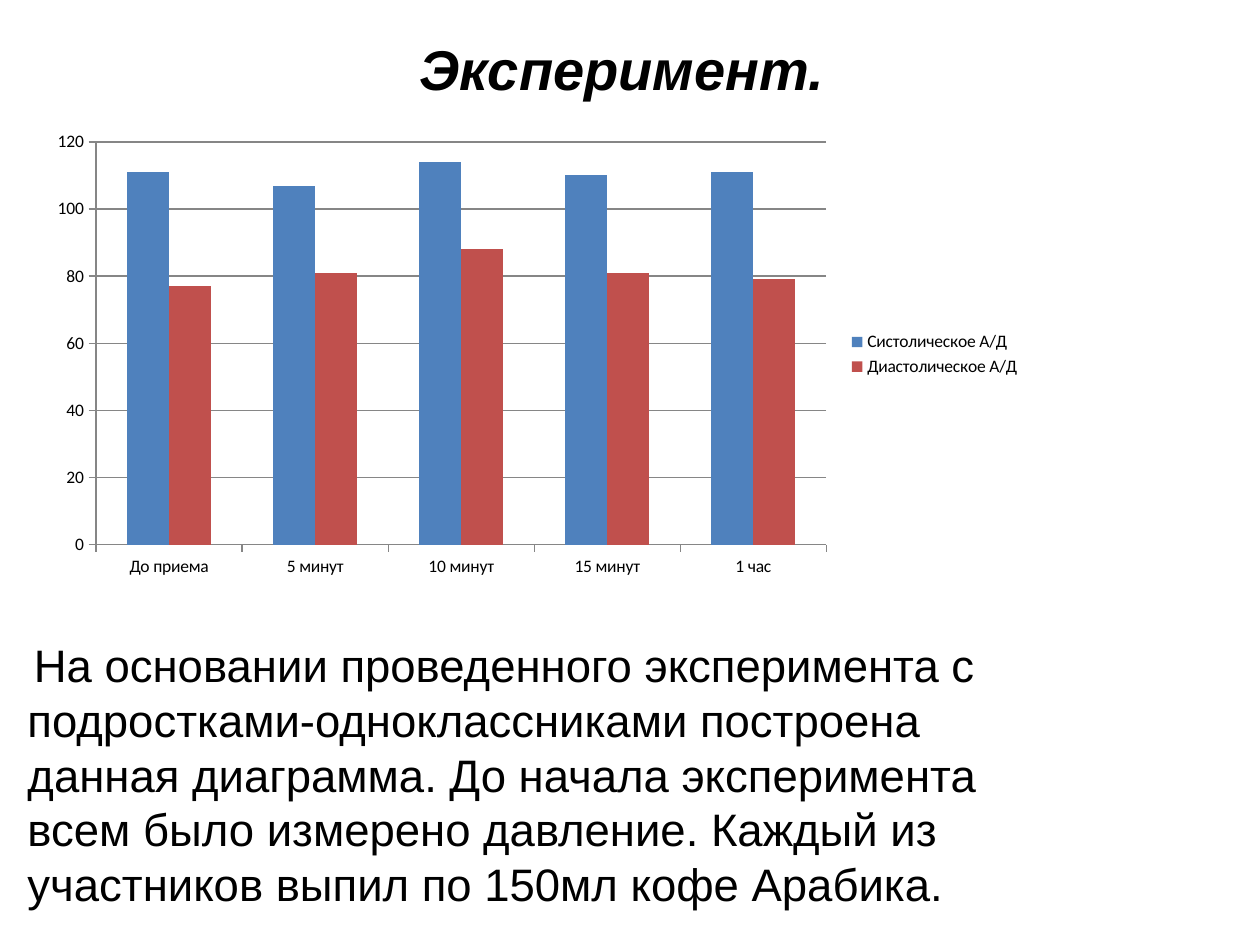
from pptx import Presentation
from pptx.chart.data import CategoryChartData
from pptx.dml.color import RGBColor
from pptx.enum.chart import XL_CHART_TYPE, XL_LEGEND_POSITION, XL_TICK_MARK
from pptx.enum.text import MSO_ANCHOR, MSO_AUTO_SIZE, PP_ALIGN
from pptx.util import Inches, Pt


class Theme:
    text = RGBColor.from_string("000000")
    axis = RGBColor.from_string("868686")
    series = [RGBColor.from_string("4F81BD"), RGBColor.from_string("C0504D")]
    text_font = "Arial"
    chart_font = "Calibri"
    title_size = 32
    body_size = 26
    chart_size = 10
    line_height = 1.2


presentation = Presentation()
presentation.slide_width = Inches(10)
presentation.slide_height = Inches(7.5)
WIDTH, HEIGHT = presentation.slide_width, presentation.slide_height


def area(left, top, width, height):
    """Turn shares of the slide's size into lengths."""
    return (int(WIDTH * left), int(HEIGHT * top),
            int(WIDTH * width), int(HEIGHT * height))


def write(shape, text, size, align=PP_ALIGN.LEFT, bold=False, italic=False):
    frame = shape.text_frame
    frame.word_wrap = True
    frame.auto_size = MSO_AUTO_SIZE.NONE
    frame.vertical_anchor = MSO_ANCHOR.TOP
    paragraph = frame.paragraphs[0]
    paragraph.alignment = align
    paragraph.line_spacing = Pt(size * Theme.line_height)
    run = paragraph.add_run()
    run.text = text
    run.font.name = Theme.text_font
    run.font.size = Pt(size)
    run.font.bold = bold
    run.font.italic = italic
    run.font.color.rgb = Theme.text
    return paragraph


slide = presentation.slides.add_slide(presentation.slide_layouts[5])

# Title
title = slide.shapes.title
title.left, title.top, title.width, title.height = area(0, 0.03, 1, 0.09)
write(title, "Эксперимент.", Theme.title_size, PP_ALIGN.CENTER, bold=True, italic=True)
title.text_frame.margin_right = Inches(0.23)

# Blood pressure chart
pressure = CategoryChartData()
pressure.categories = ["До приема", "5 минут", "10 минут", "15 минут", "1 час"]
pressure.add_series("Систолическое А/Д", [111, 107, 114, 110, 111])
pressure.add_series("Диастолическое А/Д", [77, 81, 88, 81, 79])
chart = slide.shapes.add_chart(
    XL_CHART_TYPE.COLUMN_CLUSTERED, *area(0.03, 0.13, 0.79, 0.49), pressure).chart
chart.has_title = False
chart.font.name = Theme.chart_font
chart.font.size = Pt(Theme.chart_size)
chart.font.color.rgb = Theme.text
chart.has_legend = True
chart.legend.position = XL_LEGEND_POSITION.RIGHT
chart.legend.include_in_layout = False

plot = chart.plots[0]
plot.gap_width = 150
plot.overlap = 0
plot.vary_by_categories = False
for series, color in zip(plot.series, Theme.series):
    series.format.fill.solid()
    series.format.fill.fore_color.rgb = color

chart.value_axis.minimum_scale = 0
chart.value_axis.maximum_scale = 120
chart.value_axis.major_unit = 20
chart.value_axis.has_major_gridlines = True
for axis in (chart.category_axis, chart.value_axis):
    axis.major_tick_mark = XL_TICK_MARK.OUTSIDE
for lined in (chart.category_axis, chart.value_axis, chart.value_axis.major_gridlines):
    lined.format.line.color.rgb = Theme.axis
    lined.format.line.width = Pt(0.75)

# Conclusion
conclusion = slide.shapes.add_textbox(*area(0.012, 0.668, 0.85, 0.305))
paragraph = write(
    conclusion,
    "На основании проведенного эксперимента с подростками-одноклассниками "
    "построена данная диаграмма. До начала эксперимента всем было измерено "
    "давление. Каждый из участников выпил по 150мл кофе Арабика.",
    Theme.body_size)
paragraph._p.get_or_add_pPr().set("indent", str(Inches(0.05)))

presentation.save("out.pptx")
